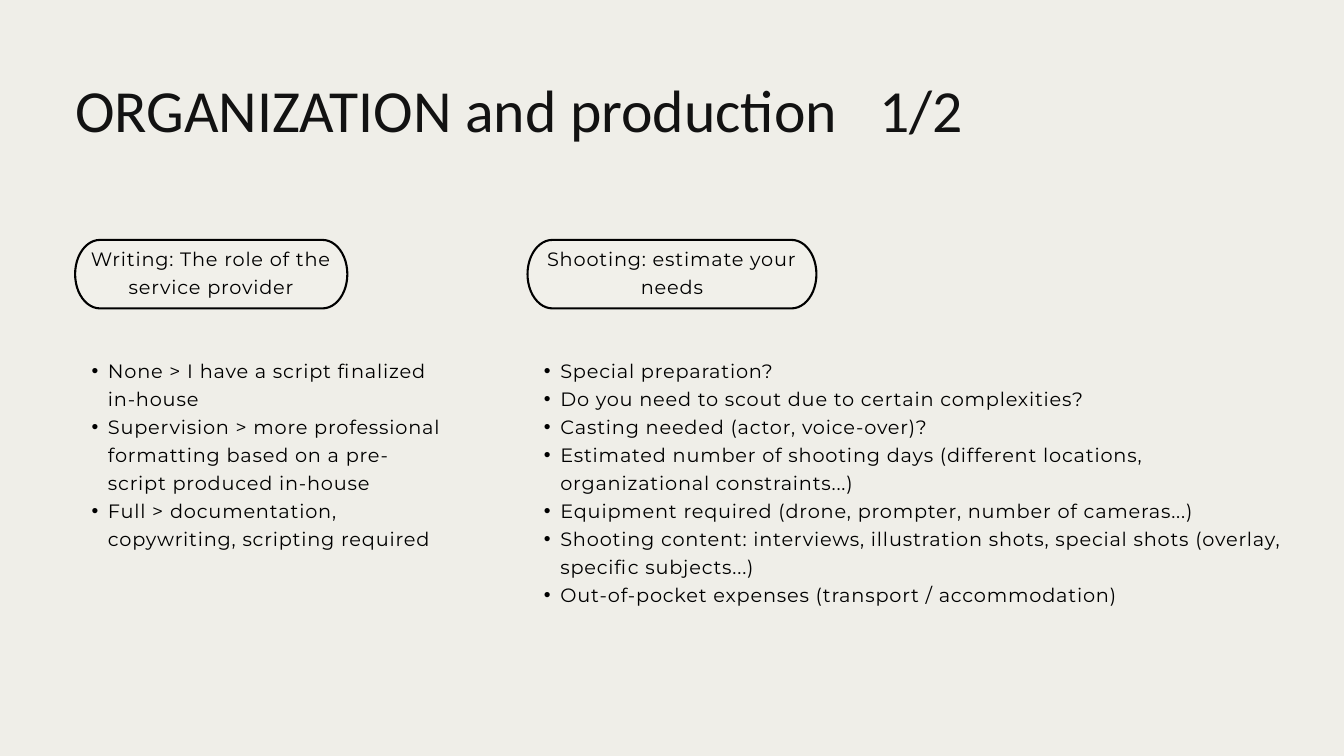
from math import cos, pi, sin

from lxml.etree import SubElement
from pptx import Presentation
from pptx.dml.color import RGBColor
from pptx.enum.text import MSO_ANCHOR as Anchor, MSO_AUTO_SIZE as AutoSize, PP_ALIGN as Align
from pptx.oxml.ns import qn
from pptx.util import Cm, Pt

MARGIN = 2.84
PILL_TOP, PILL_HEIGHT = 9.07, 2.59
LIST_TOP = 13.4
COLUMNS = [
    (MARGIN, 14.07, 7.37, 10.29, "Writing: The role of the service provider", [
        "None > I have a script finalized in-house",
        "Supervision > more professional formatting based on a pre-script produced in-house",
        "Full > documentation, copywriting, scripting required",
    ]),
    (19.94, 28.55, 9.47, 10.92, "Shooting: estimate your needs", [
        "Special preparation?",
        "Do you need to scout due to certain complexities?",
        "Casting needed (actor, voice-over)?",
        "Estimated number of shooting days (different locations, organizational constraints...)",
        "Equipment required (drone, prompter, number of cameras...)",
        "Shooting content: interviews, illustration shots, special shots (overlay, specific subjects...)",
        "Out-of-pocket expenses (transport / accommodation)",
    ]),
]


def paint(color_format, color):
    """Apply a hex colour to a fill or a font."""
    color_format.rgb = RGBColor.from_string(color)


def set_insets(frame, left=0, top=0, right=0, bottom=0):
    """Set the insets of a text frame in centimetres and wrap its text."""
    frame.margin_left, frame.margin_top = Cm(left), Cm(top)
    frame.margin_right, frame.margin_bottom = Cm(right), Cm(bottom)
    frame.word_wrap = True


def style_body(paragraph):
    """Give a paragraph the spaced body type of the slide."""
    paragraph.line_spacing = Pt(30)
    for run in paragraph.runs:
        run.font.size = Pt(20.7)
        run.font.name = "Montserrat"
        paint(run.font.color, "000000")
        run.font._element.set("spc", "90")


def add_title(slide, left, top, width, height):
    """Place the title, with the page count set off by a tab stop."""
    title = slide.shapes.title
    title.left, title.top, title.width, title.height = map(Cm, (left, top, width, height))
    frame = title.text_frame
    set_insets(frame)
    frame.auto_size = AutoSize.NONE
    frame.vertical_anchor = Anchor.TOP
    frame.text = "ORGANIZATION and production\t1/2"
    heading = frame.paragraphs[0]
    tabs = SubElement(heading._p.get_or_add_pPr(), qn("a:tabLst"))
    SubElement(tabs, qn("a:tab"), pos=str(Cm(30.4)), algn="l")
    heading.alignment = Align.LEFT
    heading.line_spacing = Pt(64)
    for run in heading.runs:
        run.font.size = Pt(64)
        run.font.name = "Calibri"
        paint(run.font.color, "121212")


def add_pill(slide, left, top, width, height, label):
    """Draw an outlined pill with elliptical ends and a centred label."""
    radius, steps = 0.94, 24
    points = []
    for center, start in ((left + width - radius, -pi / 2), (left + radius, pi / 2)):
        for step in range(steps + 1):
            angle = start + pi * step / steps
            points.append((Cm(center + radius * cos(angle)),
                           Cm(top + height / 2 * (1 + sin(angle)))))
    outline = slide.shapes.build_freeform(*points[0])
    outline.add_line_segments(points[1:], close=True)
    pill = outline.convert_to_shape()
    pill.shadow.inherit = False
    pill.fill.solid()
    paint(pill.fill.fore_color, "F1F0EA")
    paint(pill.line.color, "000000")
    pill.line.width = Pt(2.25)
    frame = pill.text_frame
    set_insets(frame, 0.15, 0.15, 0.15, 0.4)
    frame.vertical_anchor = Anchor.MIDDLE
    frame.text = label
    frame.paragraphs[0].alignment = Align.CENTER
    style_body(frame.paragraphs[0])


def add_bullets(slide, left, top, width, height, points):
    """Write a bulleted list in the given box."""
    frame = slide.shapes.add_textbox(*map(Cm, (left, top, width, height))).text_frame
    set_insets(frame)
    frame.auto_size = AutoSize.SHAPE_TO_FIT_TEXT
    frame.text = "\n".join(points)
    for paragraph in frame.paragraphs:
        paragraph.level = 1
        paragraph.alignment = Align.LEFT
        properties = paragraph._p.get_or_add_pPr()
        properties.set("marL", str(Cm(1.24)))
        properties.set("indent", str(Cm(-0.62)))
        SubElement(properties, qn("a:buFont"), typeface="Arial")
        SubElement(properties, qn("a:buChar"), char="•")
        style_body(paragraph)


def add_column(slide, left, width, list_height, pill_width, label, points):
    """Stack a pill heading and its list in one column."""
    add_pill(slide, left, PILL_TOP, pill_width, PILL_HEIGHT, label)
    add_bullets(slide, left, LIST_TOP, width, list_height, points)


def main():
    """Build the slide and save it."""
    deck = Presentation()
    deck.slide_width, deck.slide_height = Cm(50.8), Cm(28.58)
    slide = deck.slides.add_slide(deck.slide_layouts.get_by_name("Title Only"))
    slide.background.fill.solid()
    paint(slide.background.fill.fore_color, "EFEEE8")
    add_title(slide, MARGIN, 3.2, 45.09, 2.36)
    for column in COLUMNS:
        add_column(slide, *column)
    deck.save("out.pptx")


if __name__ == "__main__":
    main()
